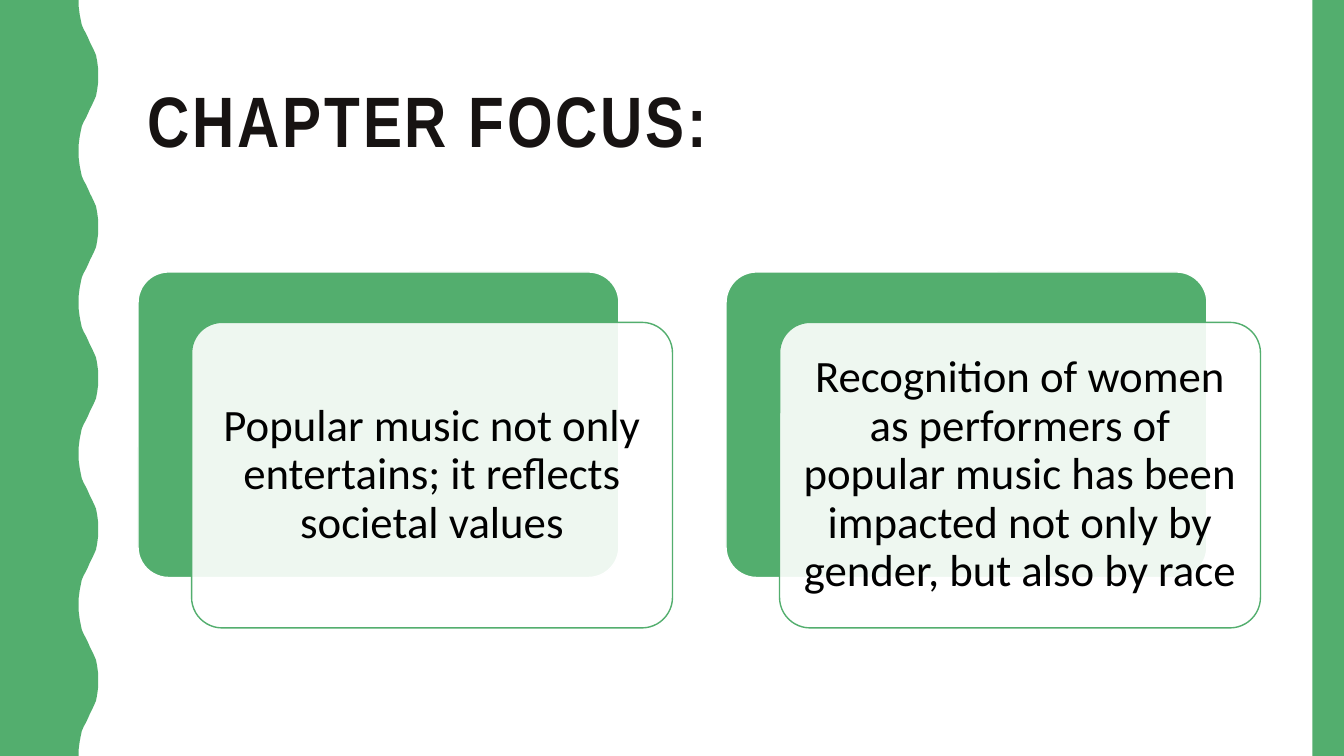
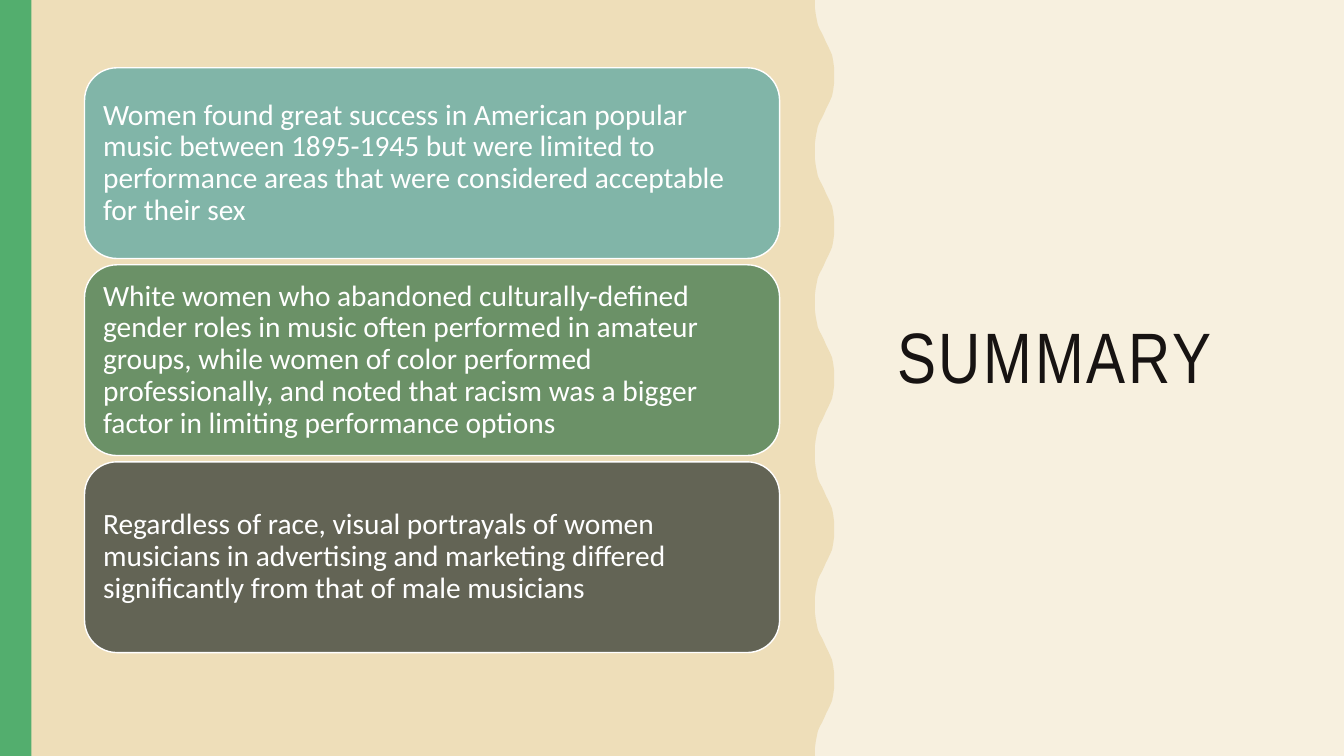
import dataclasses

import lxml.etree
import pptx
import pptx.dml.color
import pptx.enum.shapes
import pptx.enum.text
import pptx.oxml.ns
import pptx.util

UNIT = pptx.util.Inches(1) // 96


@dataclasses.dataclass(frozen=True)
class Theme:
    """Colours, fonts and type sizes shared by the slides."""
    white: str = "FFFFFF"
    ink: str = "171312"
    black: str = "000000"
    green: str = "53AE6E"
    cream: str = "F7F0DF"
    sand: str = "EEDEB9"
    bars: tuple = ("81B5A8", "6B9167", "636455")
    title_font: str = "Arial Narrow"
    body_font: str = "Calibri"
    title_size: int = 51
    focus_size: int = 32
    summary_size: int = 21
    leading: float = 0.9
    outline: int = 1


@dataclasses.dataclass(frozen=True)
class Box:
    """A region in columns and rows of the 1280 by 720 slide grid."""
    left: float
    top: float
    width: float
    height: float

    def emu(self):
        """Return left, top, width and height as slide lengths."""
        return [round(n * UNIT) for n in dataclasses.astuple(self)]

    def split(self, columns, rows, gap):
        """Divide the box into equal cells, row by row."""
        width = (self.width - gap * (columns - 1)) / columns
        height = (self.height - gap * (rows - 1)) / rows
        return [Box(self.left + c * (width + gap), self.top + r * (height + gap),
                    width, height)
                for r in range(rows) for c in range(columns)]


THEME = Theme()
SLIDE = Box(0, 0, 1280, 720)
EDGE = 30
WAVES = 5
WAVE_DEPTH = 18.5
HALF_WAVE = ((0, 0), (0.09, 0), (0.19, 0.05), (0.27, 0.11), (0.33, 0.16),
             (0.39, 0.26), (0.44, 0.37), (0.5, 0.48), (0.56, 0.58),
             (0.61, 0.68), (0.67, 0.79), (0.73, 0.89), (0.81, 0.95),
             (0.91, 1), (1, 1))


def rgb(colour):
    """Turn a hex string into a colour."""
    return pptx.dml.color.RGBColor.from_string(colour)


def paint(shape, fill, line=None, opacity=100):
    """Give a shape a flat fill and an optional outline."""
    shape.shadow.inherit = False
    shape.fill.solid()
    shape.fill.fore_color.rgb = rgb(fill)
    if opacity < 100:
        tint = shape.element.spPr.find(".//" + pptx.oxml.ns.qn("a:srgbClr"))
        lxml.etree.SubElement(tint, pptx.oxml.ns.qn("a:alpha"), val=str(opacity * 1000))
    if line:
        shape.line.color.rgb = rgb(line)
        shape.line.width = pptx.util.Pt(THEME.outline)
    else:
        shape.line.fill.background()


def write(shape, words, font, size, colour, inset, centred=False):
    """Set one wrapped, vertically centred paragraph and return its run."""
    frame = shape.text_frame
    frame.word_wrap = True
    frame.vertical_anchor = pptx.enum.text.MSO_ANCHOR.MIDDLE
    margin = pptx.util.Inches(inset)
    frame.margin_left = frame.margin_right = margin
    frame.margin_top = frame.margin_bottom = margin
    paragraph = frame.paragraphs[0]
    align = pptx.enum.text.PP_ALIGN
    paragraph.alignment = align.CENTER if centred else align.LEFT
    paragraph.line_spacing = THEME.leading
    run = paragraph.add_run()
    run.text = words
    run.font.name = font
    run.font.size = pptx.util.Pt(size)
    run.font.color.rgb = rgb(colour)
    return run


def add_title(slide, box, words, bold=False):
    """Place a letter-spaced slide title."""
    title = slide.shapes.add_textbox(*box.emu())
    run = write(title, words, THEME.title_font, THEME.title_size, THEME.ink, 0.1)
    run.font.bold = bold
    run.font._element.set("spc", "200")


def add_edge(slide, left):
    """Place the straight green band along one side."""
    band = slide.shapes.add_shape(pptx.enum.shapes.MSO_SHAPE.RECTANGLE,
                                  *Box(left, 0, EDGE, SLIDE.height).emu())
    paint(band, THEME.green)


def add_wavy_panel(slide, box, colour):
    """Fill a box whose right side swells outward in equal waves."""
    period = box.height / WAVES
    rise = [(y / 2, x) for y, x in HALF_WAVE]
    swell = rise + [(1 - y, x) for y, x in rise[-2:0:-1]]
    right = box.left + box.width
    bottom = box.top + box.height
    points = [(right + x * WAVE_DEPTH, box.top + (wave + y) * period)
              for wave in range(WAVES) for y, x in swell]
    points += [(right, bottom), (box.left, bottom)]
    outline = slide.shapes.build_freeform(box.left, box.top, scale=UNIT)
    outline = slide.shapes.build_freeform(*box.emu()[:2], scale=1.0)
    outline.add_line_segments([(round(x * UNIT), round(y * UNIT)) for x, y in points])
    paint(outline.convert_to_shape(), colour)


def add_card(slide, box, fill, line, corner, opacity=100):
    """Place a rounded card and return it."""
    card = slide.shapes.add_shape(pptx.enum.shapes.MSO_SHAPE.ROUNDED_RECTANGLE, *box.emu())
    card.adjustments[0] = corner
    paint(card, fill, line, opacity)
    return card


def add_focus_cards(slide, box, statements):
    """Place side-by-side statements, each on a veil over a green card."""
    shift, drop = 51, 48
    for cell, words in zip(box.split(len(statements), 1, shift), statements):
        back = Box(cell.left, cell.top, cell.width - shift, cell.height - drop)
        veil = dataclasses.replace(back, left=back.left + shift, top=back.top + drop)
        add_card(slide, back, THEME.green, THEME.white, 0.1)
        front = add_card(slide, veil, THEME.white, THEME.green, 0.1, opacity=90)
        write(front, words, THEME.body_font, THEME.focus_size, THEME.black, 0.13, centred=True)


def add_summary_bars(slide, box, findings):
    """Stack the findings as coloured bars."""
    for bar, words, colour in zip(box.split(1, len(findings), 6), findings, THEME.bars):
        card = add_card(slide, bar, colour, THEME.white, 0.17)
        write(card, words, THEME.body_font, THEME.summary_size, THEME.white, 0.09)


def add_blank(deck, colour):
    """Add an empty slide with a flat background."""
    slide = deck.slides.add_slide(deck.slide_layouts[6])
    slide.background.fill.solid()
    slide.background.fill.fore_color.rgb = rgb(colour)
    return slide


def build_focus(deck):
    """Build the chapter focus slide."""
    slide = add_blank(deck, THEME.white)
    add_title(slide, Box(131.5, 40, 1069, 156.5), "CHAPTER FOCUS:", bold=True)
    add_wavy_panel(slide, Box(0, 0, 75, SLIDE.height), THEME.green)
    add_edge(slide, SLIDE.width - EDGE)
    add_focus_cards(slide, Box(131.5, 259, 1069, 339), (
        "Popular music not only entertains; it reflects societal values",
        "Recognition of women as performers of popular music has been impacted "
        "not only by gender, but also by race"))


def build_summary(deck):
    """Build the summary slide."""
    slide = add_blank(deck, THEME.cream)
    add_title(slide, Box(845, 51, 384, 584.5), "SUMMARY")
    add_wavy_panel(slide, Box(0, 0, 776, SLIDE.height), THEME.sand)
    add_edge(slide, 0)
    add_summary_bars(slide, Box(80.5, 64.5, 662, 557), (
        "Women found great success in American popular music between 1895-1945 "
        "but were limited to performance areas that were considered acceptable "
        "for their sex",
        "White women who abandoned culturally-defined gender roles in music "
        "often performed in amateur groups, while women of color performed "
        "professionally, and noted that racism was a bigger factor in limiting "
        "performance options",
        "Regardless of race, visual portrayals of women musicians in advertising "
        "and marketing differed significantly from that of male musicians"))


def main():
    """Build and save the deck."""
    deck = pptx.Presentation()
    deck.slide_width, deck.slide_height = SLIDE.emu()[2:]
    build_focus(deck)
    build_summary(deck)
    deck.save("out.pptx")


if __name__ == "__main__":
    main()
